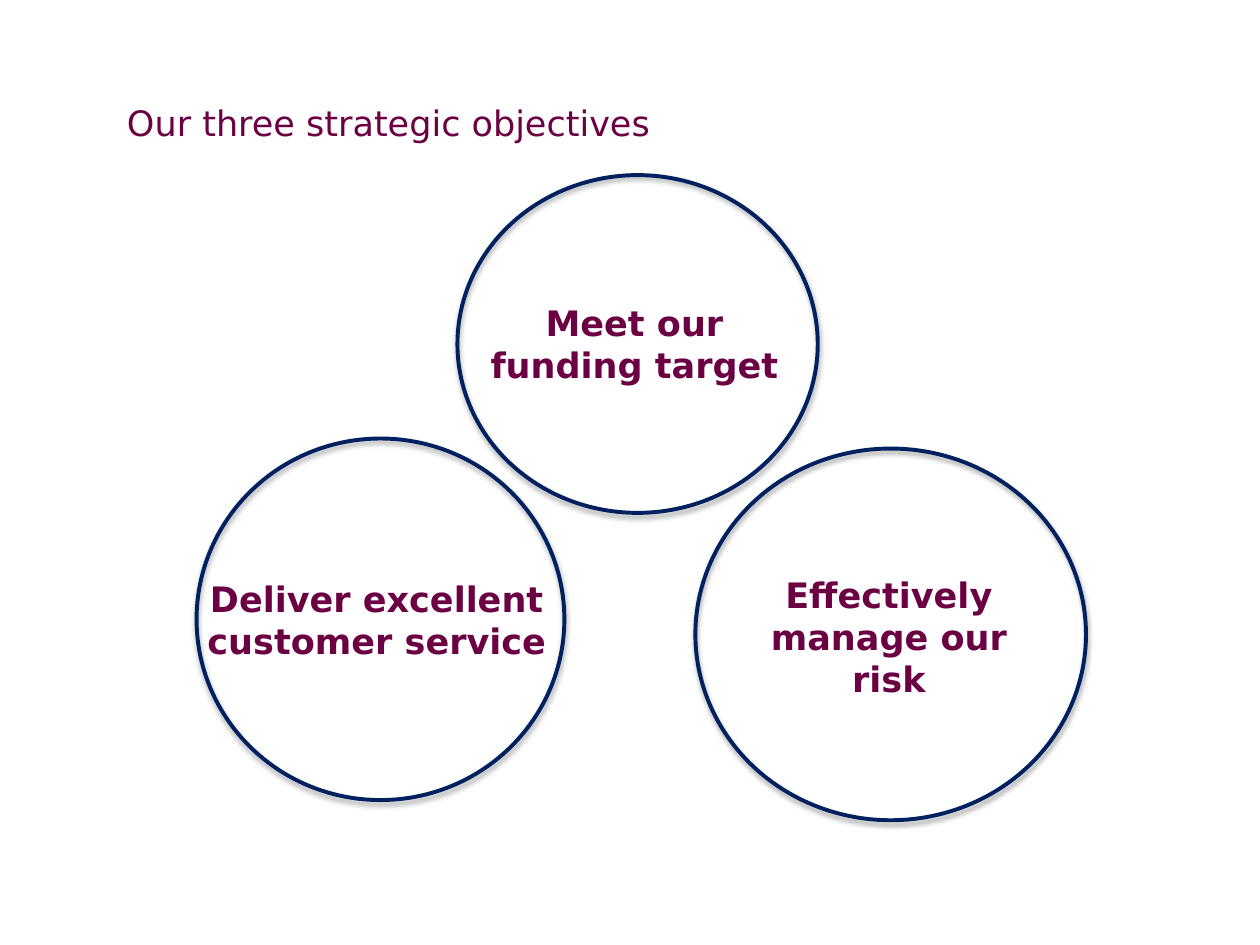
from lxml.etree import SubElement
from pptx import Presentation
from pptx.dml.color import RGBColor
from pptx.enum.shapes import MSO_SHAPE
from pptx.enum.text import MSO_ANCHOR, PP_ALIGN
from pptx.oxml.ns import qn
from pptx.util import Pt

PLUM = RGBColor(0x6B, 0x00, 0x42)
NAVY = RGBColor(0x00, 0x20, 0x60)
FONT = "DejaVu Sans"

TITLE_BOX = (65.5, 43.9, 504, 52.6)
OBJECTIVES = [
    ("Meet our funding target",
     (261.4, 100.1, 205.9, 193), (257.8, 168.5, 209.5, 55.4)),
    ("Deliver excellent customer service",
     (112.3, 250.6, 210.2, 206.6), (110.2, 326.2, 210.2, 104.4)),
    ("Effectively manage our risk",
     (397.4, 256.3, 223.2, 212.4), (414.7, 324, 186.5, 79.9)),
]


def add_text(shapes, box, text, anchor, align, bold):
    """Place a wrapped plum text box."""
    frame = shapes.add_textbox(*map(Pt, box)).text_frame
    frame.word_wrap = True
    frame.vertical_anchor = anchor
    para = frame.paragraphs[0]
    para.text = text
    para.alignment = align
    para.font.name = FONT
    para.font.size = Pt(20)
    para.font.bold = bold
    para.font.color.rgb = PLUM


def add_soft_shadow(shape):
    """Give a shape a faint shadow falling straight down."""
    shape.shadow.inherit = False
    effects = shape._element.spPr.find(qn("a:effectLst"))
    shadow = SubElement(effects, qn("a:outerShdw"), blurRad=str(Pt(3.1)),
                        dist=str(Pt(1.8)), dir="5400000", rotWithShape="0")
    colour = SubElement(shadow, qn("a:srgbClr"), val="000000")
    SubElement(colour, qn("a:alpha"), val="35000")


def add_objective(page, text, circle_box, text_box):
    """Group an outlined circle with its centred label."""
    group = page.shapes.add_group_shape()
    circle = group.shapes.add_shape(MSO_SHAPE.OVAL, *map(Pt, circle_box))
    circle.fill.background()
    circle.line.color.rgb = NAVY
    circle.line.width = Pt(2.25)
    add_soft_shadow(circle)
    add_text(group.shapes, text_box, text, MSO_ANCHOR.TOP, PP_ALIGN.CENTER, True)


def add_title(page, box):
    """Place the slide heading."""
    add_text(page.shapes, box, "Our three strategic objectives",
             MSO_ANCHOR.MIDDLE, PP_ALIGN.LEFT, False)


def main():
    """Build and save the deck."""
    deck = Presentation()
    deck.slide_width, deck.slide_height = Pt(720), Pt(540)
    page = deck.slides.add_slide(deck.slide_layouts[6])
    add_title(page, TITLE_BOX)
    for objective in OBJECTIVES:
        add_objective(page, *objective)
    deck.save("out.pptx")


if __name__ == "__main__":
    main()
